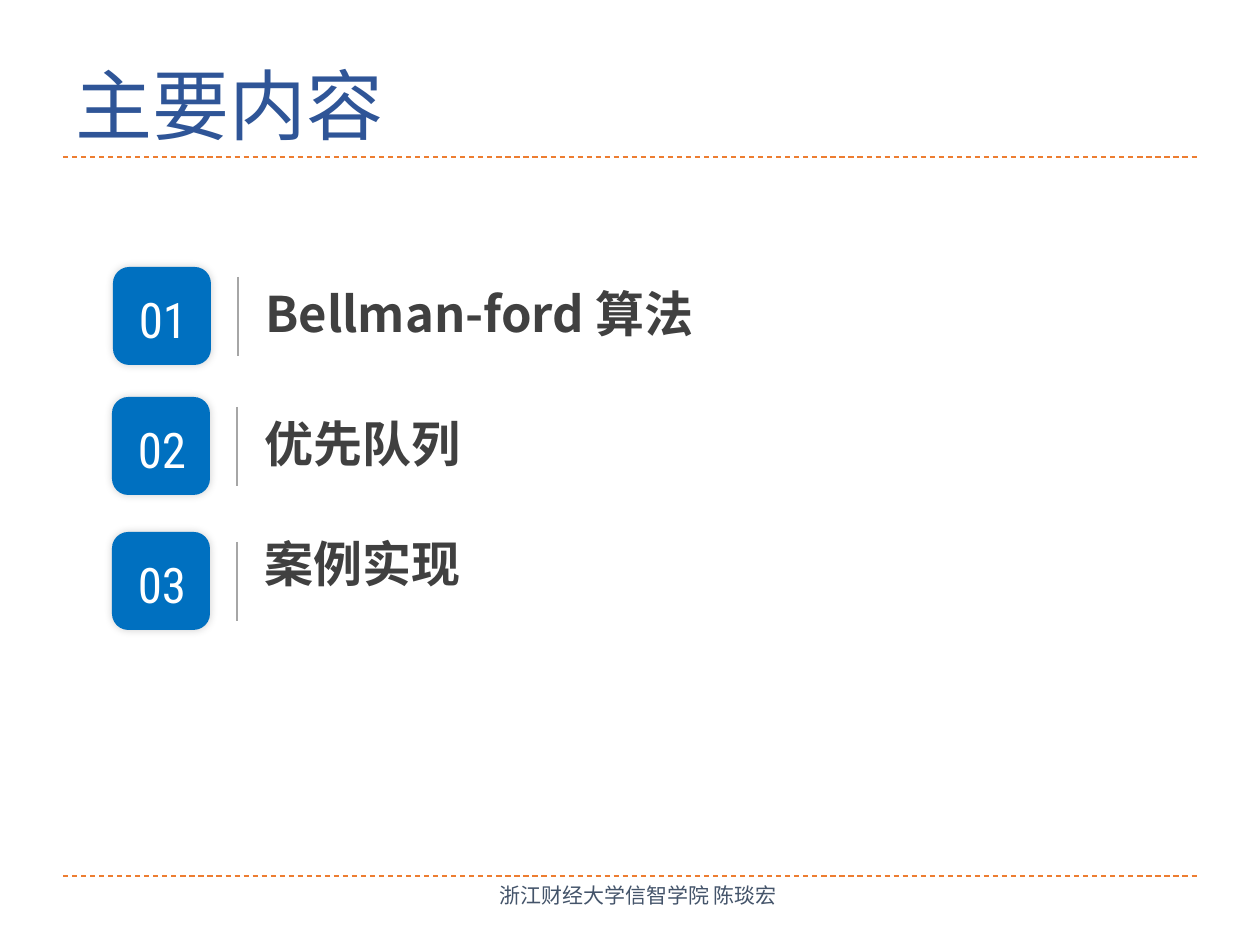
import pptx
import pptx.util
import pptx.dml.color
import pptx.enum.dml
import pptx.enum.shapes
import pptx.enum.text
import pptx.oxml
import pptx.oxml.ns

PX = 914400 / 126
ALIGN = pptx.enum.text.PP_ALIGN
ANCHOR = pptx.enum.text.MSO_ANCHOR
CJK = "Noto Sans CJK SC"


def px(*lengths):
    """Turn pixel lengths into EMU."""
    return [pptx.util.Emu(round(n * PX)) for n in lengths]


def color(hex_code):
    """Return the colour for a hex string."""
    return pptx.dml.color.RGBColor.from_string(hex_code)


def set_effects(sp, inner=""):
    """Give a shape an explicit effect list."""
    ns = pptx.oxml.ns.nsdecls("a")
    xml = f"<a:effectLst {ns}>{inner}</a:effectLst>"
    sp._element.spPr.append(pptx.oxml.parse_xml(xml))


def add_line(s, x1, y1, x2, y2, hex_code, width, dash=None):
    """Draw a straight line without a shadow."""
    line = s.shapes.add_connector(
        pptx.enum.shapes.MSO_CONNECTOR.STRAIGHT, *px(x1, y1, x2, y2))
    line.line.color.rgb = color(hex_code)
    line.line.width = pptx.util.Pt(width)
    line.line.dash_style = dash
    set_effects(line)


def add_text(s, box, text, size, font, hex_code, bold=False,
             align=ALIGN.LEFT, anchor=ANCHOR.TOP, spacing=None):
    """Place one line of text in a box."""
    tf = s.shapes.add_textbox(*px(*box)).text_frame
    tf.word_wrap = True
    tf.vertical_anchor = anchor
    p = tf.paragraphs[0]
    p.text = text
    p.alignment = align
    p.line_spacing = spacing
    for r in p.runs:
        r.font.size = pptx.util.Pt(size)
        r.font.bold = bold
        r.font.color.rgb = color(hex_code)
        r.font.name = font
        ea = pptx.oxml.ns.qn("a:ea")
        r.font._element.append(r.font._element.makeelement(ea, {"typeface": CJK}))


def add_rule(s, x, y, w):
    """Draw a dashed rule across the slide."""
    add_line(s, x, y, x + w, y, "ED7D31", 0.75, pptx.enum.dml.MSO_LINE.DASH)


def add_header(s, x, y, w, h):
    """Place the title above its rule."""
    add_text(s, (x, y, w, h), "主要内容", 44, "Calibri", "2F5597",
             anchor=ANCHOR.BOTTOM, spacing=0.9)
    add_rule(s, x, y + h, w)


def add_footer(s, x, y, w, h):
    """Place the author line below its rule."""
    add_rule(s, x, y, w)
    add_text(s, (x + 336, y, 483, h), "浙江财经大学信智学院 陈琰宏 ", 12,
             "Calibri", "44546A", align=ALIGN.CENTER)


def add_item(s, x, y, w, number, label, label_dy):
    """Place a numbered tile, a divider and a label."""
    side = 98
    tile = s.shapes.add_shape(
        pptx.enum.shapes.MSO_SHAPE.ROUNDED_RECTANGLE, *px(x, y, side, side))
    tile.fill.solid()
    tile.fill.fore_color.rgb = color("0070C0")
    tile.line.fill.background()
    set_effects(tile, '<a:outerShdw blurRad="63500" dist="0" dir="0" algn="ctr" '
                'rotWithShape="0"><a:srgbClr val="000000"><a:alpha val="19000"/>'
                '</a:srgbClr></a:outerShdw>')
    add_text(s, (x + 1, y + 16, side, 72), f"{number:02d}", 28,
             "Roboto Condensed", "FFFFFF", align=ALIGN.CENTER)
    add_line(s, x + 125, y + 10, x + 125, y + 89, "A6A6A6", 1)
    add_text(s, (x + 140, y + label_dy, w - 140, 72), label, 28, CJK,
             "404040", bold=True)


def main():
    """Build the contents slide and save it."""
    prs = pptx.Presentation()
    prs.slide_width, prs.slide_height = px(1260, 945)
    s = prs.slides.add_slide(prs.slide_layouts[6])
    add_header(s, 63, 21, 1134, 136)
    add_footer(s, 63, 876, 1134, 50)
    items = [(113, 267, "Bellman-ford 算法", 10),
             (112, 397, "优先队列", 10),
             (112, 532, "案例实现", -5)]
    for number, (x, y, label, label_dy) in enumerate(items, 1):
        add_item(s, x, y, 925, number, label, label_dy)
    prs.save("out.pptx")


if __name__ == "__main__":
    main()
